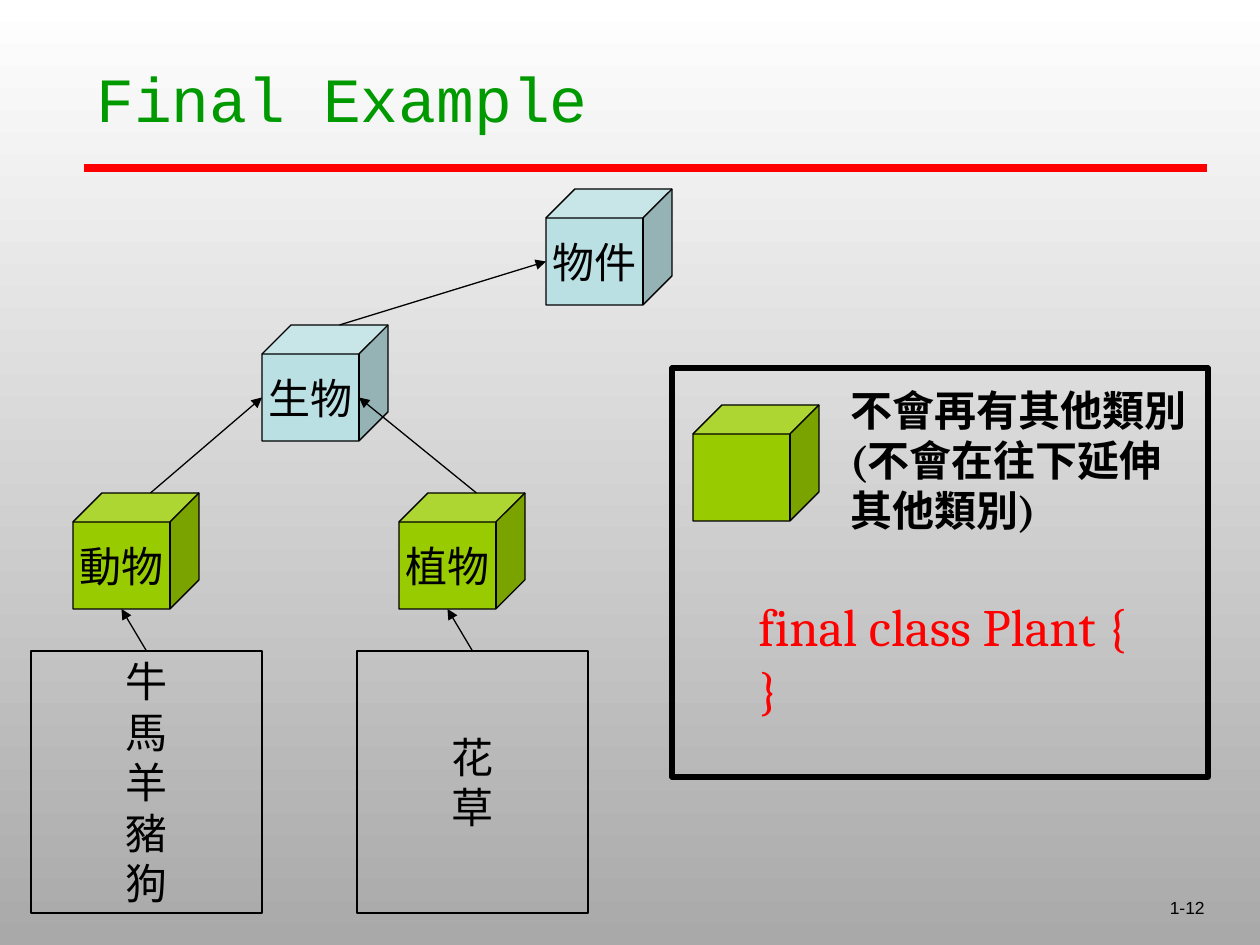
import lxml.etree
import pptx
import pptx.dml.color
import pptx.enum.shapes
import pptx.enum.text
import pptx.oxml.ns
import pptx.util

SHAPE = pptx.enum.shapes.MSO_SHAPE
ALIGN = pptx.enum.text.PP_ALIGN
ANCHOR = pptx.enum.text.MSO_ANCHOR

THEME = {
    "black": "000000", "red": "FF0000", "green": "009900",
    "blue_cube": "BBE0E3", "green_cube": "99CC00",
    "sky": "FFFFFF", "ground": "A9A9A9",
    "title": 36, "code": 30, "body": 24, "number": 10,
    "thin": 0.75, "frame": 3, "rule": 4.5,
    "font": "Cambria", "title_font": "Courier New", "number_font": "Arial",
}

PX = 914400 / 126
CUBE_W, CUBE_H, DEPTH = 126, 116, 29
LIST_W, LIST_H = 231, 262
LIST_DX, LIST_DY = -42, 158

CLASSES = {
    "物件": (546, 189, "blue_cube"),
    "生物": (262, 325, "blue_cube"),
    "動物": (73, 493, "green_cube"),
    "植物": (399, 493, "green_cube"),
}
INHERITS = [("動物", "生物", "left"), ("植物", "生物", "right"), ("生物", "物件", "left")]
MEMBERS = {"動物": ["牛", "馬", "羊", "豬", "狗"], "植物": ["花", "草"]}
LEGEND = ["不會再有其他類別", "(不會在往下延伸", "其他類別)"]
CODE = ["final class Plant {", "}"]


def px(*values):
    return [round(value * PX) for value in values]


def color(name):
    return pptx.dml.color.RGBColor.from_string(THEME[name])


def write(box, text, size="body", ink="black", font="font", bold=False,
          align=ALIGN.LEFT, anchor=ANCHOR.TOP, wrap=False):
    frame = box.text_frame
    frame.word_wrap = wrap
    frame.vertical_anchor = anchor
    lines = [text] if isinstance(text, str) else text
    for index, line in enumerate(lines):
        para = frame.paragraphs[0] if index == 0 else frame.add_paragraph()
        para.alignment = align
        span = para.add_run()
        span.text = line
        span.font.size = pptx.util.Pt(THEME[size])
        span.font.name = THEME[font]
        span.font.bold = bold
        span.font.color.rgb = color(ink)


def add_text(page, area, text, **style):
    write(page.shapes.add_textbox(*px(*area)), text, **style)


def add_box(page, kind, area, fill=None, width="thin"):
    box = page.shapes.add_shape(kind, *px(*area))
    box.shadow.inherit = False
    if fill:
        box.fill.solid()
        box.fill.fore_color.rgb = color(fill)
    else:
        box.fill.background()
    box.line.color.rgb = color("black")
    box.line.width = pptx.util.Pt(THEME[width])
    return box


def add_cube(page, x, y, fill):
    cube = add_box(page, SHAPE.CUBE, (x, y, CUBE_W, CUBE_H), fill)
    cube.adjustments[0] = 0.25
    return cube


def add_line(page, start, end, ink="black", width="thin", arrow=True):
    line = page.shapes.add_connector(
        pptx.enum.shapes.MSO_CONNECTOR.STRAIGHT, *px(*start, *end))
    line.line.color.rgb = color(ink)
    line.line.width = pptx.util.Pt(THEME[width])
    properties = line._element.spPr
    if arrow:
        outline = properties.find(pptx.oxml.ns.qn("a:ln"))
        lxml.etree.SubElement(outline, pptx.oxml.ns.qn("a:tailEnd"), type="triangle")
    lxml.etree.SubElement(properties, pptx.oxml.ns.qn("a:effectLst"))


def cube_point(name, side):
    x, y, _ = CLASSES[name]
    face = CUBE_W - DEPTH
    dx, dy = {
        "left": (0, (CUBE_H + DEPTH) / 2),
        "right": (face, (CUBE_H + DEPTH) / 2),
        "top": (DEPTH + face / 2, 0),
        "bottom": (face / 2, CUBE_H),
    }[side]
    return x + dx, y + dy


def paint_background(page):
    fill = page.background.fill
    fill.gradient()
    fill.gradient_angle = 270
    for stop, position, name in zip(fill.gradient_stops, (0, 1), ("sky", "ground")):
        stop.position = position
        stop.color.rgb = color(name)


def main():
    deck = pptx.Presentation()
    deck.slide_width, deck.slide_height = px(1260, 945)
    page = deck.slides.add_slide(deck.slide_layouts[6])
    paint_background(page)

    add_line(page, (84, 168), (1207, 168), ink="red", width="rule", arrow=False)
    add_text(page, (955, 861, 262, 63), "1-12", size="number", font="number_font",
             align=ALIGN.RIGHT, anchor=ANCHOR.BOTTOM, wrap=True)
    add_text(page, (84, 53, 1124, 157), "Final Example", size="title", ink="green",
             font="title_font", wrap=True)

    for name, (x, y, fill) in CLASSES.items():
        write(add_cube(page, x, y, fill), name, align=ALIGN.CENTER, anchor=ANCHOR.MIDDLE)
    for child, parent, side in INHERITS:
        add_line(page, cube_point(child, "top"), cube_point(parent, side))
    for name, members in MEMBERS.items():
        x, y, _ = CLASSES[name]
        left, top = x + LIST_DX, y + LIST_DY
        box = add_box(page, SHAPE.RECTANGLE, (left, top, LIST_W, LIST_H))
        write(box, members, align=ALIGN.CENTER, anchor=ANCHOR.MIDDLE)
        add_line(page, (left + LIST_W / 2, top), cube_point(name, "bottom"))

    add_text(page, (838, 378, 362, 164), LEGEND, bold=True)
    add_box(page, SHAPE.RECTANGLE, (672, 368, 536, 409), width="frame")
    add_cube(page, 693, 405, "green_cube")
    add_text(page, (746, 588, 401, 140), CODE, size="code", ink="red")
    deck.save("out.pptx")


if __name__ == "__main__":
    main()
